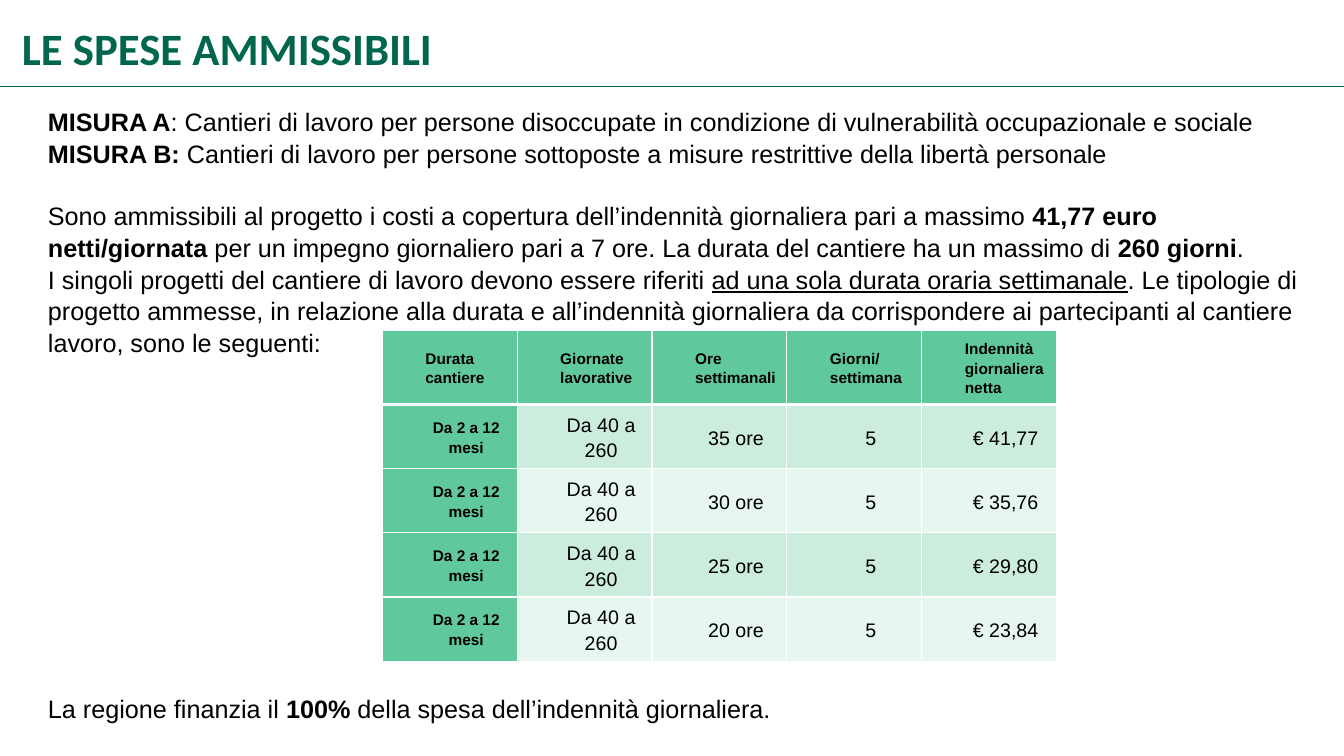
from lxml import etree
from pptx import Presentation
from pptx import util as u
from pptx.dml.color import RGBColor
from pptx.enum import shapes, text
from pptx.oxml import ns

PX = 9080
SLIDE_WIDTH, SLIDE_HEIGHT = 1343, 755
GREEN, BLACK, WHITE = "00664D", "000000", "FFFFFF"
HEADER_FILL, ODD_FILL, EVEN_FILL = "60C99C", "CCECDE", "E7F6EF"
LINE_HEIGHT = 21.7

HEADERS = ["Durata cantiere", "Giornate lavorative", "Ore settimanali",
           "Giorni/settimana", "Indennità giornaliera netta"]
ALLOWANCES = [("35 ore", "€ 41,77"), ("30 ore", "€ 35,76"),
              ("25 ore", "€ 29,80"), ("20 ore", "€ 23,84")]

PARAGRAPHS = [
    (0, [("MISURA A", "b"),
         (": Cantieri di lavoro per persone disoccupate in condizione di "
          "vulnerabilità occupazionale e sociale", "")]),
    (0, [("MISURA B: ", "b"),
         ("Cantieri di lavoro per persone sottoposte a misure restrittive "
          "della libertà personale", "")]),
    (1, [("Sono ammissibili al progetto i costi a copertura dell’indennità "
          "giornaliera pari a massimo ", ""),
         ("41,77 euro netti/giornata", "b"),
         (" per un impegno giornaliero pari a 7 ore. La durata del cantiere "
          "ha un massimo di ", ""),
         ("260 giorni", "b"), (".", "")]),
    (0, [("I singoli progetti del cantiere di lavoro devono essere riferiti ", ""),
         ("ad una sola durata oraria settimanale", "u"),
         (". Le tipologie di progetto ammesse, in relazione alla durata e "
          "all’indennità giornaliera da corrispondere ai partecipanti al "
          "cantiere lavoro, sono le seguenti:", "")]),
    (11, [("La regione finanzia il ", ""), ("100%", "b"),
          (" della spesa dell’indennità giornaliera.", "")]),
]


def color(value):
    """Return the colour for a hex string."""
    return RGBColor.from_string(value)


def px(*lengths):
    """Turn pixel lengths into EMU."""
    return [u.Emu(length * PX) for length in lengths]


def set_font(paragraph, name, size, shade, bold=None):
    """Set the font shared by a whole paragraph."""
    font = paragraph.font
    font.name, font.size, font.bold = name, u.Pt(size), bold
    font.color.rgb = color(shade)


def add_title(slide, left, top, width, height):
    """Place the heading and the rule that crosses the slide below it."""
    frame = slide.shapes.add_textbox(*px(left, top, width, height)).text_frame
    frame.margin_left = frame.margin_right = 0
    frame.margin_top = frame.margin_bottom = 0
    frame.word_wrap = True
    frame.vertical_anchor = text.MSO_ANCHOR.MIDDLE
    heading = frame.paragraphs[0]
    heading.text = "LE SPESE AMMISSIBILI"
    heading.line_spacing = 0.9
    set_font(heading, "Calibri", 32, GREEN, True)

    bottom = top + height
    rule = slide.shapes.add_connector(
        shapes.MSO_CONNECTOR.STRAIGHT, *px(0, bottom, SLIDE_WIDTH, bottom))
    rule.line.color.rgb = color(GREEN)
    rule.line.width = u.Pt(0.75)
    etree.SubElement(rule._element.spPr, ns.qn("a:effectLst"))


def add_body(slide, left, top, width, height):
    """Place the explanation, leaving room for the table before its last line."""
    frame = slide.shapes.add_textbox(*px(left, top, width, height)).text_frame
    frame.word_wrap = True
    for index, (skipped_lines, pieces) in enumerate(PARAGRAPHS):
        paragraph = frame.add_paragraph() if index else frame.paragraphs[0]
        paragraph.line_spacing = 1.05
        if skipped_lines:
            paragraph.space_before = u.Pt(skipped_lines * LINE_HEIGHT)
        set_font(paragraph, "Arial", 18, BLACK)
        for wording, emphasis in pieces:
            run = paragraph.add_run()
            run.text = wording
            if emphasis == "b":
                run.font.bold = True
            elif emphasis == "u":
                run.font.underline = True


def add_borders(cell, top, bottom):
    """Draw white cell borders, with top and bottom widths in points."""
    properties = cell._tc.get_or_add_tcPr()
    for side, width in (("L", 0.96), ("R", 0.96), ("T", top), ("B", bottom)):
        border = etree.SubElement(properties, ns.qn(f"a:ln{side}"), w=str(u.Pt(width)))
        fill = etree.SubElement(border, ns.qn("a:solidFill"))
        etree.SubElement(fill, ns.qn("a:srgbClr"), val=WHITE)


def add_allowances(slide, left, top, width, height):
    """Place the table of working hours and daily allowances."""
    rows = [HEADERS] + [["Da 2 a 12 mesi", "Da 40 a 260", hours, "5", amount]
                        for hours, amount in ALLOWANCES]
    table = slide.shapes.add_table(
        len(rows), len(HEADERS), *px(left, top, width, height)).table
    row_height = 64
    header_height = height - row_height * len(ALLOWANCES)
    for r, values in enumerate(rows):
        table.rows[r].height = px(row_height if r else header_height)[0]
        for c, value in enumerate(values):
            heading = r == 0 or c == 0
            cell = table.cell(r, c)
            add_borders(cell, 3 if r == 1 else 0.96, 0.96 if r else 3)
            cell.fill.solid()
            cell.fill.fore_color.rgb = color(
                HEADER_FILL if heading else ODD_FILL if r % 2 else EVEN_FILL)
            cell.vertical_anchor = text.MSO_ANCHOR.MIDDLE
            paragraph = cell.text_frame.paragraphs[0]
            paragraph.text = value
            paragraph._p.get_or_add_pPr().set("marL", str(33 * PX))
            paragraph.line_spacing = 1.15
            if r:
                paragraph.alignment = text.PP_ALIGN.CENTER
            set_font(paragraph, "Arial", 11 if heading else 14, BLACK, heading)


def main():
    """Build the slide and save it."""
    deck = Presentation()
    deck.slide_width, deck.slide_height = px(SLIDE_WIDTH, SLIDE_HEIGHT)
    slide = deck.slides.add_slide(deck.slide_layouts[6])
    add_title(slide, 22, 16, 1208, 70)
    add_body(slide, 38, 100, 1269, 620)
    add_allowances(slide, 382, 330, 674, 330)
    deck.save("out.pptx")


if __name__ == "__main__":
    main()
